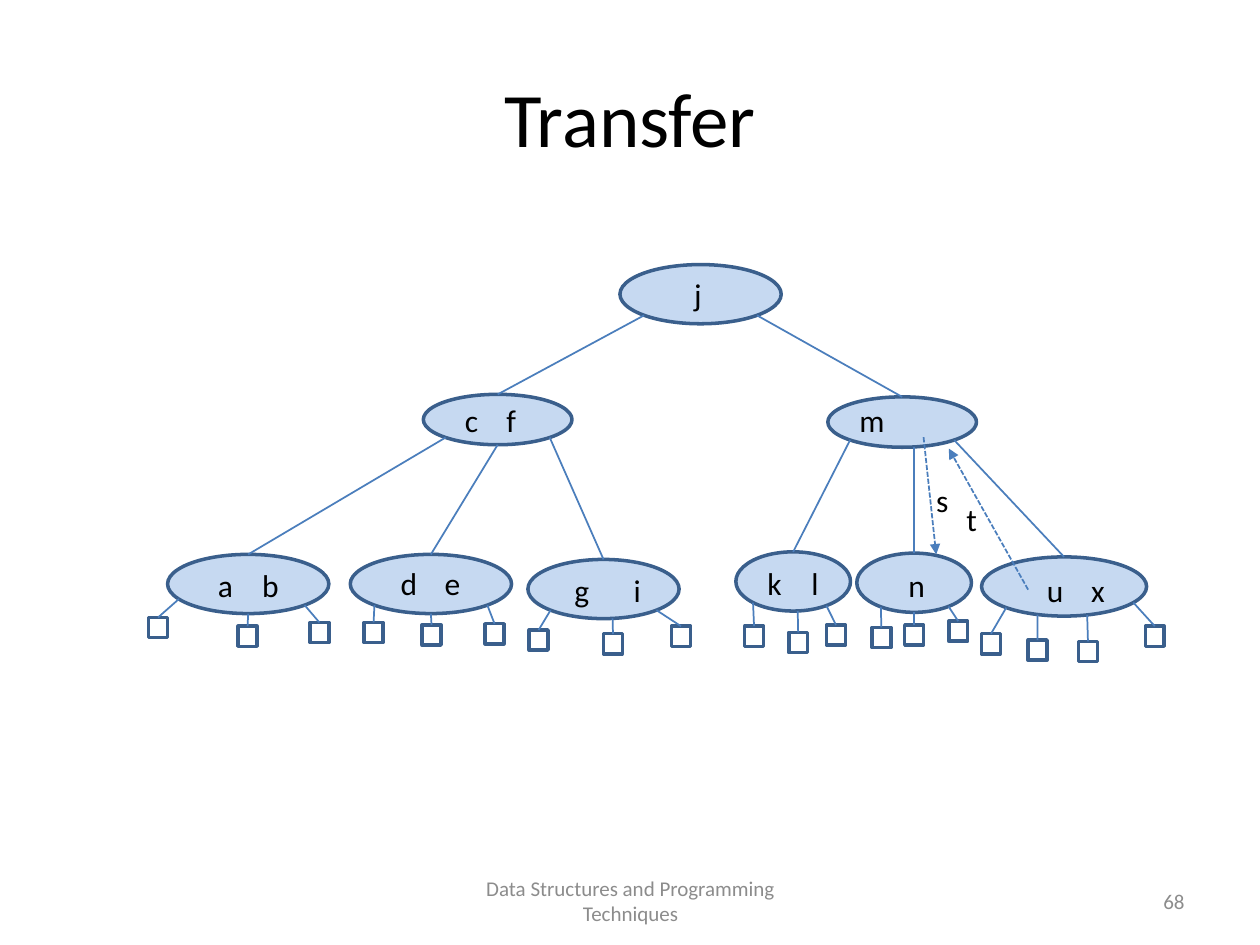
from collections import namedtuple
from math import sqrt

from lxml.etree import SubElement
from pptx import Presentation
from pptx.dml.color import RGBColor
from pptx.enum.dml import MSO_LINE
from pptx.enum.shapes import MSO_CONNECTOR, MSO_SHAPE
from pptx.enum.text import MSO_ANCHOR, PP_ALIGN
from pptx.oxml.ns import qn
from pptx.util import Inches, Pt

FONT = "Calibri"
BLACK, GREY = "000000", "8C8C8C"
NODE_FILL, OUTLINE, EDGE = "C6D9F1", "3A5F8C", "4B7EBC"
LEAF_W, LEAF_H = 0.15, 0.16
TEXT_H = 0.4

# box: left, top, width, height; keys_at: left and top of the first key;
# gap: distance between two keys
Node = namedtuple("Node", "box keys keys_at gap", defaults=(0.35,))

NODES = {
    "root": Node((4.92, 2.1, 1.28, 0.47), "j", (5.51, 2.13)),
    "left": Node((3.36, 3.13, 1.18, 0.4), "cf", (3.69, 3.13), 0.33),
    "right": Node((6.57, 3.15, 1.18, 0.4), "m", (6.82, 3.13)),
    "ab": Node((1.33, 4.4, 1.28, 0.47), "ab", (1.73, 4.44)),
    "de": Node((2.78, 4.4, 1.28, 0.47), "de", (3.18, 4.43)),
    "gi": Node((4.19, 4.44, 1.2, 0.47), "gi", (4.56, 4.48), 0.47),
    "kl": Node((5.84, 4.38, 0.91, 0.47), "kl", (6.09, 4.43)),
    "n": Node((6.8, 4.39, 0.91, 0.47), "n", (7.21, 4.44)),
    "ux": Node((7.79, 4.42, 1.31, 0.47), "ux", (8.31, 4.48)),
}

# Where an edge leaves its parent is a share of the parent's width.
BRANCHES = {
    "root": [(0.15, "left"), (0.85, "right")],
    "left": [(0.15, "ab"), (0.5, "de"), (0.85, "gi")],
    "right": [(0.15, "kl"), (0.58, "n"), (0.85, "ux")],
}
LEAVES = {  # exit share, left and top of the leaf
    "ab": [(0.07, 1.18, 4.9), (0.5, 1.89, 4.97), (0.85, 2.46, 4.94)],
    "de": [(0.15, 2.89, 4.94), (0.5, 3.35, 4.96), (0.85, 3.85, 4.95)],
    "gi": [(0.15, 4.2, 5), (0.56, 4.79, 5.03), (0.85, 5.33, 4.97)],
    "kl": [(0.15, 5.91, 4.97), (0.54, 6.26, 5.02), (0.79, 6.56, 4.96)],
    "n": [(0.21, 6.92, 4.98), (0.5, 7.18, 4.96), (0.8, 7.53, 4.93)],
    "ux": [(0.15, 7.79, 5.03), (0.34, 8.16, 5.08), (0.64, 8.56, 5.09),
           (0.92, 9.09, 4.97)],
}


def rgb(color):
    return RGBColor.from_string(color)


def lengths(values):
    return [Inches(v) for v in values]


def format_text(p, size, color, align):
    p.alignment = align
    for r in p.runs:
        r.font.name, r.font.size = FONT, Pt(size)
        r.font.color.rgb = rgb(color)


def add_text(slide, box, text, size, color, align, anchor=MSO_ANCHOR.MIDDLE):
    sp = slide.shapes.add_textbox(*lengths(box))
    tf = sp.text_frame
    tf.word_wrap, tf.vertical_anchor = True, anchor
    tf.text = text
    format_text(tf.paragraphs[0], size, color, align)
    return tf


def add_keys(slide, keys, left, top, gap=0.35):
    """Write the keys in a row, spaced by a tab stop."""
    tf = add_text(slide, (left, top, gap * len(keys), TEXT_H), "\t".join(keys),
                  18, BLACK, PP_ALIGN.LEFT, MSO_ANCHOR.TOP)
    tf.margin_left = tf.margin_right = 0
    tf.word_wrap = False
    if len(keys) > 1:
        tabs = SubElement(tf.paragraphs[0]._p.get_or_add_pPr(), qn("a:tabLst"))
        SubElement(tabs, qn("a:tab"), pos=str(Inches(gap)), algn="l")


def add_outlined(slide, kind, box, fill=None):
    sp = slide.shapes.add_shape(kind, *lengths(box))
    sp.shadow.inherit = False
    if fill:
        sp.fill.solid()
        sp.fill.fore_color.rgb = rgb(fill)
    else:
        sp.fill.background()
    sp.line.color.rgb, sp.line.width = rgb(OUTLINE), Pt(2)
    return sp


def add_edge(slide, start, end):
    line = slide.shapes.add_connector(MSO_CONNECTOR.STRAIGHT, *lengths(start + end))
    line.line.color.rgb, line.line.width = rgb(EDGE), Pt(1)
    SubElement(line._element.spPr, qn("a:effectLst"))
    return line


def add_move(slide, start, end):
    """Draw the dashed arrow of a key that changes its node."""
    line = add_edge(slide, start, end).line
    line.dash_style = MSO_LINE.SQUARE_DOT
    SubElement(line._get_or_add_ln(), qn("a:tailEnd"), type="triangle")


def exit_point(node, share):
    """Point on the lower half of the ellipse at a share of its width."""
    left, top, width, height = node.box
    drop = sqrt(1 - (2 * share - 1) ** 2)
    return left + share * width, top + height * (1 + drop) / 2


def add_tree(slide):
    ellipses = {name: add_outlined(slide, MSO_SHAPE.OVAL, node.box, NODE_FILL)
                for name, node in NODES.items()}
    for parent, branches in BRANCHES.items():
        for share, child in branches:
            start = exit_point(NODES[parent], share)
            add_edge(slide, start, start).end_connect(ellipses[child], 0)
    for parent, leaves in LEAVES.items():
        for share, left, top in leaves:
            leaf = add_outlined(slide, MSO_SHAPE.RECTANGLE,
                                (left, top, LEAF_W, LEAF_H))
            start = exit_point(NODES[parent], share)
            add_edge(slide, start, start).end_connect(leaf, 0)
    for node in NODES.values():
        add_keys(slide, node.keys, *node.keys_at, node.gap)


def add_title(slide, text):
    title = slide.shapes.title
    title.left, title.top, title.width, title.height = lengths((0.5, 0.3, 9, 1.25))
    title.text_frame.text = text
    title.text_frame.vertical_anchor = MSO_ANCHOR.MIDDLE
    format_text(title.text_frame.paragraphs[0], 44, BLACK, PP_ALIGN.CENTER)


def main():
    prs = Presentation()
    prs.slide_width, prs.slide_height = Inches(10), Inches(7.5)
    slide = prs.slides.add_slide(prs.slide_layouts[5])
    add_title(slide, "Transfer")
    add_tree(slide)
    add_move(slide, (8.16, 4.68), (7.53, 3.56))
    add_keys(slide, "t", 7.67, 3.92)
    add_move(slide, (7.33, 3.47), (7.43, 4.4))
    add_keys(slide, "s", 7.43, 3.77)
    add_text(slide, (3.42, 6.95, 3.17, 0.4),
             "Data Structures and Programming Techniques", 12, GREY, PP_ALIGN.CENTER)
    add_text(slide, (7.17, 6.95, 2.33, 0.4), "68", 12, GREY, PP_ALIGN.RIGHT)
    prs.save("out.pptx")


if __name__ == "__main__":
    main()
